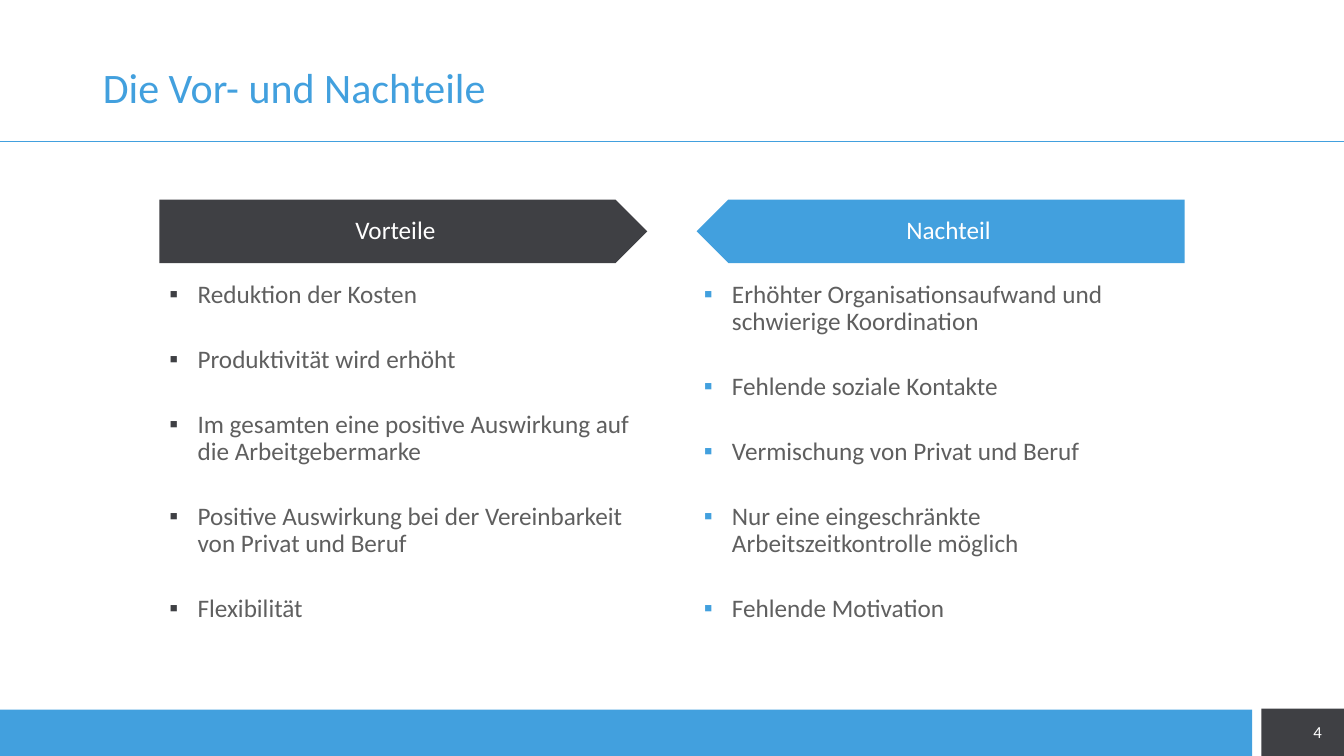
"""Builds the slide on advantages and disadvantages as two bulleted columns."""
import pptx
import pptx.util
import pptx.dml.color
import pptx.enum.shapes
import pptx.enum.text
import pptx.oxml.ns
from lxml import etree

Inches, Pt = pptx.util.Inches, pptx.util.Pt
SHAPE = pptx.enum.shapes.MSO_SHAPE
ALIGN = pptx.enum.text.PP_ALIGN
ANCHOR = pptx.enum.text.MSO_ANCHOR
qn = pptx.oxml.ns.qn
COLORS = {"dark": "3F4044", "blue": "42A0DE", "text": "5F5F5F", "white": "FFFFFF"}


def rgb(name):
    return pptx.dml.color.RGBColor.from_string(COLORS[name])


def write(sp, lines, size, color, anchor, **fmt):
    tf = sp.text_frame
    tf.word_wrap = True
    tf.auto_size = pptx.enum.text.MSO_AUTO_SIZE.NONE
    tf.vertical_anchor = anchor
    for i, line in enumerate(lines):
        p = tf.add_paragraph() if i else tf.paragraphs[0]
        for key, value in fmt.items():
            setattr(p, key, value)
        r = p.add_run()
        r.text = line
        for key, value in {"name": "Calibri", "size": Pt(size)}.items():
            setattr(r.font, key, value)
        r.font.color.rgb = rgb(color)


prs = pptx.Presentation()
prs.slide_width, prs.slide_height = Inches(13.33), Inches(7.5)
s = prs.slides.add_slide(prs.slide_layouts[3])
title, *bodies = s.placeholders

for x, y, w, h, color in [(12.51, 7.03, 0.82, 0.47, "dark"), (0, 7.04, 12.42, 0.47, "blue")]:
    sp = s.shapes.add_shape(SHAPE.RECTANGLE, Inches(x), Inches(y), Inches(w), Inches(h))
    sp.shadow.inherit = False
    sp.fill.solid()
    sp.fill.fore_color.rgb = rgb(color)
    sp.line.fill.background()

rule = s.shapes.add_connector(pptx.enum.shapes.MSO_CONNECTOR.STRAIGHT,
                              0, Inches(1.4), prs.slide_width, Inches(1.4))
rule.line.color.rgb = rgb("blue")
rule.line.width = Pt(0.5)
etree.SubElement(rule._element.spPr, qn("a:effectLst"))

title.left, title.top, title.width, title.height = map(Inches, (0.92, 0.4, 11.5, 0.98))
write(title, ["Die Vor- und Nachteile"], 30, "blue", ANCHOR.MIDDLE,
      alignment=ALIGN.LEFT, line_spacing=0.9)

columns = [
    ("Vorteile", "dark", 1.58, 1.58, False, [
        "Reduktion der Kosten",
        "Produktivität wird erhöht",
        "Im gesamten eine positive Auswirkung auf die Arbeitgebermarke",
        "Positive Auswirkung bei der Vereinbarkeit von Privat und Beruf",
        "Flexibilität"]),
    ("Nachteil", "blue", 6.91, 6.88, True, [
        "Erhöhter Organisationsaufwand und schwierige Koordination",
        "Fehlende soziale Kontakte",
        "Vermischung von Privat und Beruf",
        "Nur eine eingeschränkte Arbeitszeitkontrolle möglich",
        "Fehlende Motivation"]),
]
for body, (heading, color, head_x, body_x, flip, items) in zip(bodies, columns):
    sp = s.shapes.add_shape(SHAPE.PENTAGON, Inches(head_x), Inches(1.98), Inches(4.84), Inches(0.63))
    sp.shadow.inherit = False
    sp.fill.solid()
    sp.fill.fore_color.rgb = rgb(color)
    sp.line.fill.background()
    if flip:
        sp._element.spPr.find(qn("a:xfrm")).set("flipH", "1")
    write(sp, [heading], 18, "white", ANCHOR.MIDDLE, alignment=ALIGN.CENTER, line_spacing=0.9)

    body.left, body.top, body.width, body.height = map(Inches, (body_x, 2.74, 4.84, 4.04))
    write(body, items, 18, "text", ANCHOR.TOP, alignment=ALIGN.LEFT,
          line_spacing=0.9, space_before=Pt(27))
    for p in body.text_frame.paragraphs:
        pPr = p._p.get_or_add_pPr()
        pPr.set("marL", str(Inches(0.28)))
        pPr.set("indent", str(-Inches(0.28)))
        bullet_color = etree.SubElement(pPr, qn("a:buClr"))
        etree.SubElement(bullet_color, qn("a:srgbClr"), val=COLORS[color])
        etree.SubElement(pPr, qn("a:buChar"), char="▪")

number = s.shapes.add_textbox(Inches(12.64), Inches(7.06), Inches(0.57), Inches(0.4))
write(number, ["4"], 12, "white", ANCHOR.MIDDLE, alignment=ALIGN.RIGHT)

prs.save("out.pptx")
